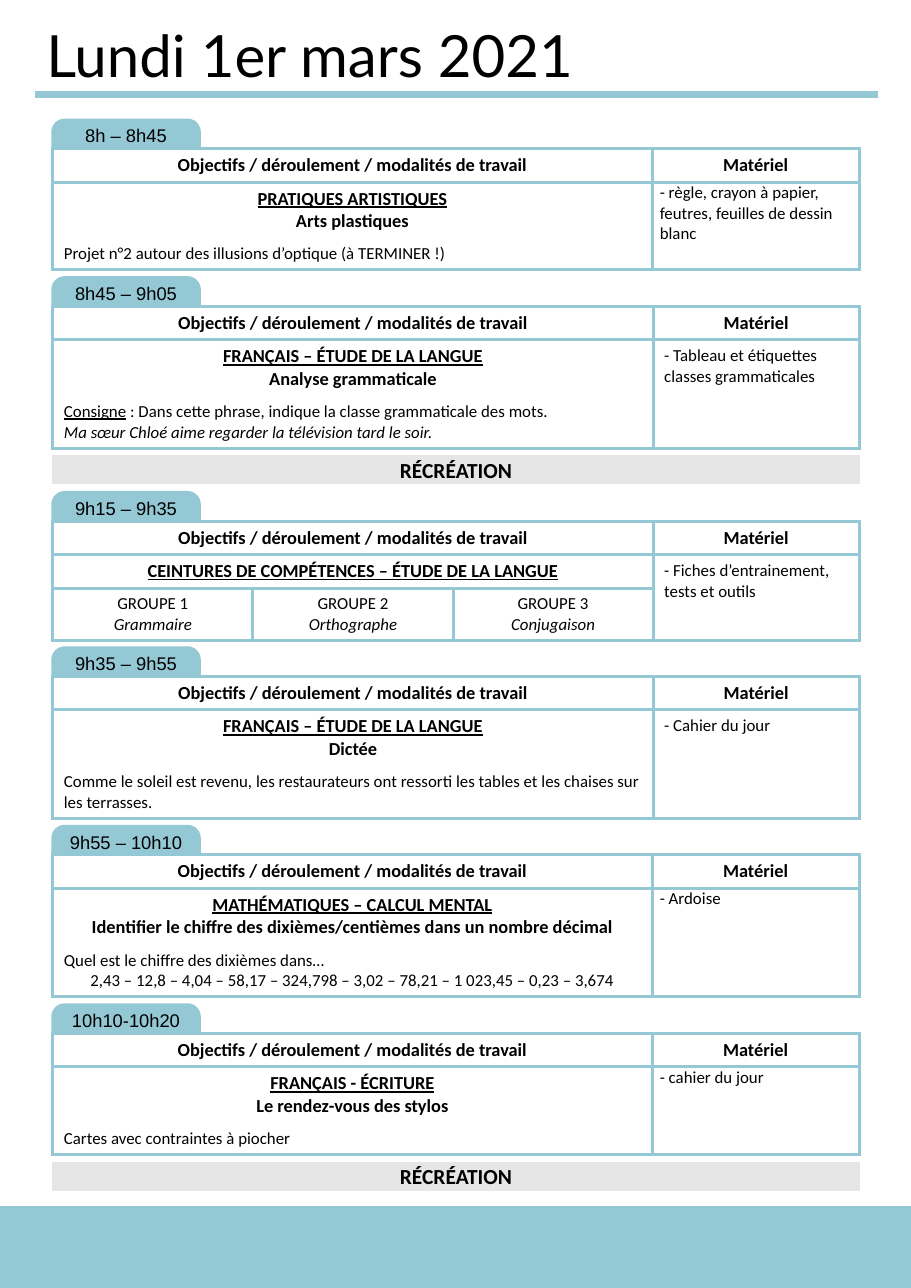
from lxml import etree
from pptx import Presentation
from pptx.dml.color import RGBColor
from pptx.enum import shapes, text
from pptx.oxml.ns import qn
from pptx.util import Inches, Pt

# Content: the morning in order; a plain string is a break
TITLE = "Lundi 1er mars 2021"
HEADERS = ("Objectifs / déroulement / modalités de travail", "Matériel")
BREAK = "RÉCRÉATION"
LEFT, CENTER = text.PP_ALIGN.LEFT, text.PP_ALIGN.CENTER
# Each detail line: alignment, then its (text, style) runs
MORNING = [
    dict(time="8h – 8h45", subject="PRATIQUES ARTISTIQUES", topic="Arts plastiques",
         details=[(LEFT, [("Projet n°2 autour des illusions d’optique (à TERMINER !)", "")])],
         equipment="- règle, crayon à papier, feutres, feuilles de dessin blanc",
         tight=True, height=0.79),
    dict(time="8h45 – 9h05", subject="FRANÇAIS – ÉTUDE DE LA LANGUE",
         topic="Analyse grammaticale",
         details=[(LEFT, [("Consigne", "u"),
                          (" : Dans cette phrase, indique la classe grammaticale des mots.", "")]),
                  (LEFT, [("Ma sœur Chloé aime regarder la télévision tard le soir.", "i")])],
         equipment="- Tableau et étiquettes classes grammaticales", tight=False, height=0.98),
    BREAK,
    dict(time="9h15 – 9h35", subject="CEINTURES DE COMPÉTENCES – ÉTUDE DE LA LANGUE",
         groups=[("GROUPE 1", "Grammaire"), ("GROUPE 2", "Orthographe"),
                 ("GROUPE 3", "Conjugaison")],
         equipment="- Fiches d’entrainement, tests et outils", tight=False, height=0.47),
    dict(time="9h35 – 9h55", subject="FRANÇAIS – ÉTUDE DE LA LANGUE", topic="Dictée",
         details=[(LEFT, [("Comme le soleil est revenu, les restaurateurs ont ressorti "
                           "les tables et les chaises sur les terrasses.", "")])],
         equipment="- Cahier du jour", tight=False, height=0.98),
    dict(time="9h55 – 10h10", subject="MATHÉMATIQUES – CALCUL MENTAL",
         topic="Identifier le chiffre des dixièmes/centièmes dans un nombre décimal",
         details=[(LEFT, [("Quel est le chiffre des dixièmes dans…", "")]),
                  (CENTER, [("2,43 – 12,8 – 4,04 – 58,17 – 324,798 – 3,02 – 78,21 – "
                             "1 023,45 – 0,23 – 3,674", "")])],
         equipment="- Ardoise", tight=True, height=0.98),
    dict(time="10h10-10h20", subject="FRANÇAIS - ÉCRITURE", topic="Le rendez-vous des stylos",
         details=[(LEFT, [("Cartes avec contraintes à piocher", "")])],
         equipment="- cahier du jour", tight=True, height=0.79),
    BREAK,
]

# Colours and page grid, in inches
TEAL, GREY = RGBColor(0x94, 0xC8, 0xD5), RGBColor(0xE7, 0xE6, 0xE6)
BLACK, WHITE = RGBColor(0, 0, 0), RGBColor(255, 255, 255)
PAGE_W, PAGE_H = 8.27, 11.69
MARGIN, WIDTH = 0.48, 7.32
TAB_W, BAR_H, TAB_STEP = 1.33, 0.25, 0.26
GAP, ROW = 0.08, 0.3
RULE_LEFT, RULE_Y, FOOTER_H = 0.32, 0.86, 0.74
MIDDLE, TOP = text.MSO_ANCHOR.MIDDLE, text.MSO_ANCHOR.TOP

presentation = Presentation()
presentation.slide_width, presentation.slide_height = Inches(PAGE_W), Inches(PAGE_H)
slide = presentation.slides.add_slide(presentation.slide_layouts[5])


def write(frame, runs, size=12, font="Calibri", style="", align=CENTER, before=0, anchor=MIDDLE):
    """Add one paragraph; runs is a text or a list of (text, style) pairs."""
    frame.word_wrap = True
    frame.vertical_anchor = anchor
    first = frame.paragraphs[0]
    paragraph = frame.add_paragraph() if first.runs else first
    paragraph.alignment, paragraph.space_before = align, Pt(before)
    for words, marks in [(runs, style)] if isinstance(runs, str) else runs:
        run = paragraph.add_run()
        run.text = words
        run.font.name, run.font.size = font, Pt(size)
        run.font.color.rgb = BLACK
        run.font.bold, run.font.italic, run.font.underline = (m in marks for m in "biu")


def add_block(kind, left, top, width, height, color, line=1):
    shape = slide.shapes.add_shape(kind, *map(Inches, (left, top, width, height)))
    shape.shadow.inherit = False
    shape.fill.solid()
    shape.fill.fore_color.rgb = shape.line.color.rgb = color
    shape.line.width = Pt(line)
    return shape


def style_cell(cell):
    cell.fill.solid()
    cell.fill.fore_color.rgb = WHITE
    properties = cell._tc.get_or_add_tcPr()
    for index, side in enumerate(("a:lnL", "a:lnR", "a:lnT", "a:lnB")):
        border = etree.Element(qn(side), w=str(Pt(2.25)))
        fill = etree.SubElement(border, qn("a:solidFill"))
        etree.SubElement(fill, qn("a:srgbClr"), val=str(TEAL))
        properties.insert(index, border)


def add_session(session, top):
    """Draw one time tab with its table and return the table's bottom."""
    groups = session.get("groups", [])
    main_columns = len(groups) or 1
    heights = [ROW] * (2 if groups else 1) + [session["height"]]
    main_width = 5.44 if session["tight"] else 5.45
    widths = [main_width / main_columns] * main_columns + [WIDTH - main_width]
    table_top = top + TAB_STEP
    table = slide.shapes.add_table(
        len(heights), len(widths),
        *map(Inches, (MARGIN, table_top, WIDTH, sum(heights)))).table
    table.first_row = table.horz_banding = False
    for column, width in zip(table.columns, widths):
        column.width = Inches(width)
    for row, height in zip(table.rows, heights):
        row.height = Inches(height)
    for cell in table.iter_cells():
        style_cell(cell)

    # Header, subject and equipment
    if groups:
        for row in (0, 1):
            table.cell(row, 0).merge(table.cell(row, main_columns - 1))
        table.cell(1, main_columns).merge(table.cell(2, main_columns))
    for column, header in zip((0, main_columns), HEADERS):
        cell = table.cell(0, column)
        write(cell.text_frame, header, style="b")
        cell.vertical_anchor = MIDDLE
    body, equipment = table.cell(1, 0), table.cell(1, main_columns)
    write(body.text_frame, session["subject"], style="bu")
    body.vertical_anchor = MIDDLE
    write(equipment.text_frame, session["equipment"], size=11, align=LEFT, anchor=TOP)
    equipment.vertical_anchor = TOP
    if session["tight"]:
        equipment.margin_left = equipment.margin_right = Inches(0.07)
        equipment.margin_top = equipment.margin_bottom = 0

    # Topic and details, or one cell per group
    if groups:
        for column, (group, skill) in enumerate(groups):
            cell = table.cell(2, column)
            write(cell.text_frame, group, size=11)
            write(cell.text_frame, skill, size=11, style="i")
            cell.vertical_anchor = MIDDLE
    else:
        write(body.text_frame, session["topic"], style="b")
        for index, (align, runs) in enumerate(session["details"]):
            write(body.text_frame, runs, size=11, align=align, before=0 if index else 7.3)

    # Time tab
    tab = add_block(shapes.MSO_SHAPE.ROUND_2_SAME_RECTANGLE,
                    MARGIN, top, TAB_W, BAR_H, TEAL, line=2)
    tab.adjustments[0] = 0.43
    write(tab.text_frame, session["time"], font="Arial")
    return table_top + sum(heights)


# Title and rule
title = slide.shapes.title
title.left, title.top, title.width, title.height = map(Inches, (RULE_LEFT, 0.12, 6.26, 0.74))
write(title.text_frame, TITLE, size=38, font="Lato", align=LEFT)
rule = slide.shapes.add_connector(
    shapes.MSO_CONNECTOR.STRAIGHT,
    *map(Inches, (RULE_LEFT, RULE_Y, PAGE_W - 0.3, RULE_Y)))
rule.line.color.rgb, rule.line.width = TEAL, Pt(4.75)
etree.SubElement(rule._element.spPr, qn("a:effectLst"))

# Sessions and breaks, stacked down the page
top = 1.09
for item in MORNING:
    if item == BREAK:
        bar = add_block(shapes.MSO_SHAPE.RECTANGLE, MARGIN, top, WIDTH, BAR_H, GREY)
        write(bar.text_frame, item, size=14, style="b")
        bottom = top + BAR_H
    else:
        bottom = add_session(item, top)
    top = bottom + GAP

# Footer band
add_block(shapes.MSO_SHAPE.RECTANGLE, 0, PAGE_H - FOOTER_H, PAGE_W, FOOTER_H, TEAL)

presentation.save("out.pptx")
